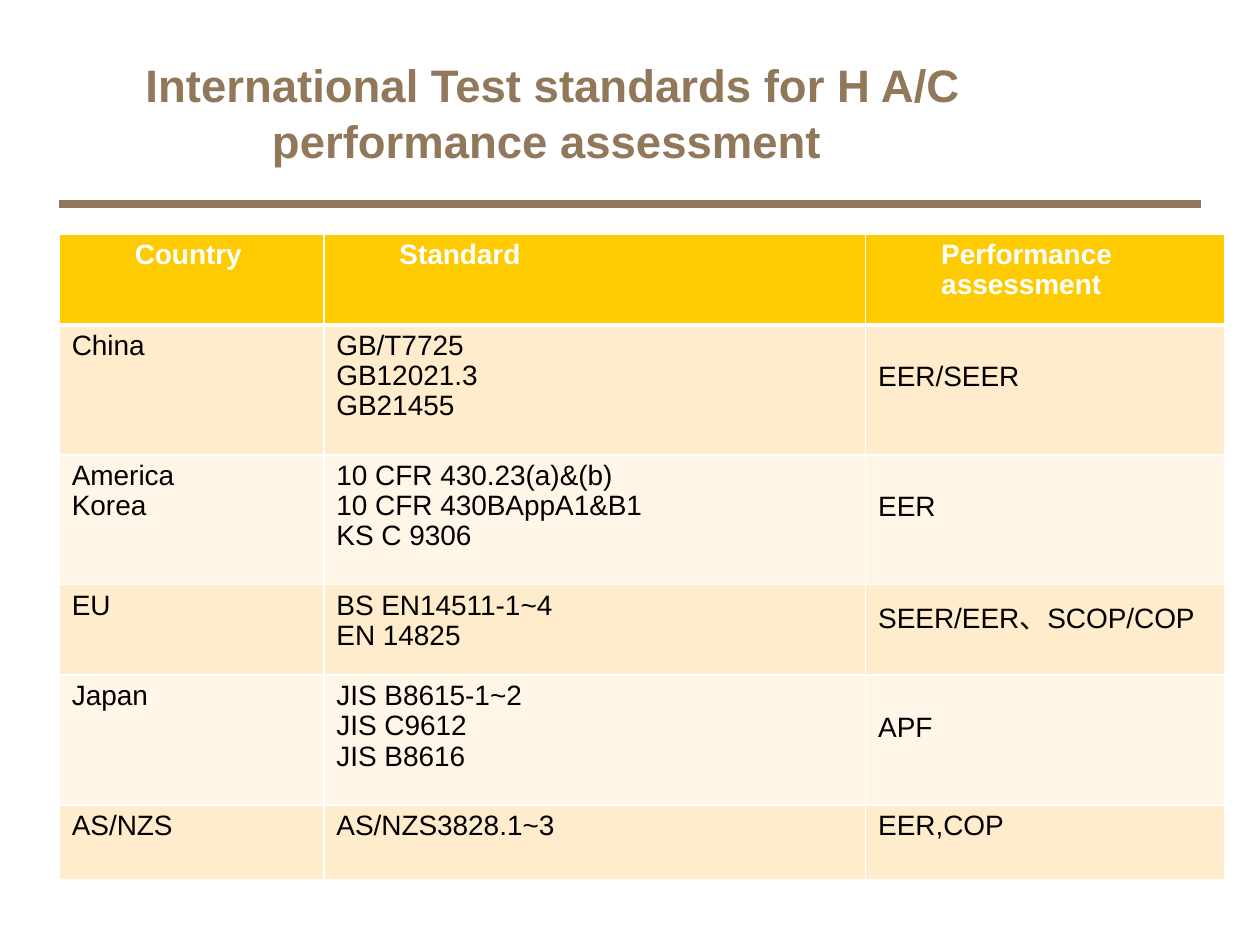
import pptx
import pptx.dml.color
import pptx.enum.shapes
import pptx.enum.text
import pptx.oxml
import pptx.oxml.ns
import pptx.util
from pptx.util import Inches

COLORS = {
    "brown": "91785B",
    "header": "FECB00",
    "odd": "FFECCC",
    "even": "FFF6E7",
    "white": "FFFFFF",
    "black": "000000",
}
COLUMN_WIDTHS = [2.1, 4.3, 2.85]
ROW_HEIGHTS = [0.72, 1.03, 1.03, 0.72, 1.03, 0.59]
HEADINGS = ["Country", "Standard", "Performance assessment"]
# Countries, standards, performance measure, top margin of the measure
STANDARDS = [
    ("China", "GB/T7725\nGB12021.3\nGB21455", "EER/SEER", 0.3),
    ("America\nKorea", "10 CFR 430.23(a)&(b)\n10 CFR 430BAppA1&B1\nKS C 9306", "EER", 0.3),
    ("EU", "BS EN14511-1~4\nEN 14825", "SEER/EER、SCOP/COP", 0.1),
    ("Japan", "JIS B8615-1~2\nJIS C9612\nJIS B8616", "APF", 0.3),
    ("AS/NZS", "AS/NZS3828.1~3", "EER,COP", 0.05),
]


def rgb(name):
    return pptx.dml.color.RGBColor.from_string(COLORS[name])


class StandardsSlide:
    font = "Arial"
    left = Inches(0.47)

    def __init__(self, deck):
        self.slide = deck.slides.add_slide(deck.slide_layouts[6])

    def style(self, frame, size, color, bold, spacing):
        for paragraph in frame.paragraphs:
            paragraph.line_spacing = spacing
            paragraph.font.name = self.font
            paragraph.font.size = pptx.util.Pt(size)
            paragraph.font.bold = bold
            paragraph.font.color.rgb = rgb(color)

    def title(self, text):
        box = self.slide.shapes.add_textbox(self.left, Inches(0.44), Inches(7.84), Inches(0.88))
        frame = box.text_frame
        frame.word_wrap = True
        frame.margin_left = frame.margin_right = frame.margin_top = frame.margin_bottom = 0
        frame.text = text
        frame.paragraphs[0].alignment = pptx.enum.text.PP_ALIGN.CENTER
        self.style(frame, 26, "brown", True, 1.03)

    def rule(self):
        y = Inches(1.62)
        line = self.slide.shapes.add_connector(
            pptx.enum.shapes.MSO_CONNECTOR.STRAIGHT, self.left, y, Inches(9.53), y)
        line.line.color.rgb = rgb("brown")
        line.line.width = pptx.util.Pt(5)
        line._element.spPr.append(pptx.oxml.parse_xml(
            f'<a:effectLst {pptx.oxml.ns.nsdecls("a")}/>'))

    def table(self):
        table = self.slide.shapes.add_table(
            len(ROW_HEIGHTS), len(COLUMN_WIDTHS), self.left, Inches(1.86),
            Inches(sum(COLUMN_WIDTHS)), Inches(sum(ROW_HEIGHTS))).table
        for column, width in zip(table.columns, COLUMN_WIDTHS):
            column.width = Inches(width)
        for row, height in zip(table.rows, ROW_HEIGHTS):
            row.height = Inches(height)
        for cell, heading in zip(table.rows[0].cells, HEADINGS):
            cell.margin_left = Inches(0.6)
            self.cell(cell, heading, "header", "white", True, bottom=3)
        for number, (*texts, measure_margin) in enumerate(STANDARDS, start=1):
            cells = table.rows[number].cells
            for cell, text in zip(cells, texts):
                self.cell(cell, text, "odd" if number % 2 else "even", "black", False,
                          top=3 if number == 1 else 1)
            cells[2].margin_top = Inches(measure_margin)

    def cell(self, cell, text, fill, color, bold, top=1, bottom=1):
        cell.text = text
        self.style(cell.text_frame, 16, color, bold, 0.97)
        for side, points in {"L": 1, "R": 1, "T": top, "B": bottom}.items():
            cell._tc.get_or_add_tcPr().append(pptx.oxml.parse_xml(
                f'<a:ln{side} {pptx.oxml.ns.nsdecls("a")} w="{pptx.util.Pt(points)}">'
                f'<a:solidFill><a:srgbClr val="{COLORS["white"]}"/></a:solidFill></a:ln{side}>'))
        cell.fill.solid()
        cell.fill.fore_color.rgb = rgb(fill)


def main():
    deck = pptx.Presentation()
    deck.slide_width, deck.slide_height = Inches(10), Inches(7.5)
    page = StandardsSlide(deck)
    page.rule()
    page.table()
    page.title("International Test standards for H A/C performance assessment ")
    deck.save("out.pptx")


if __name__ == "__main__":
    main()
